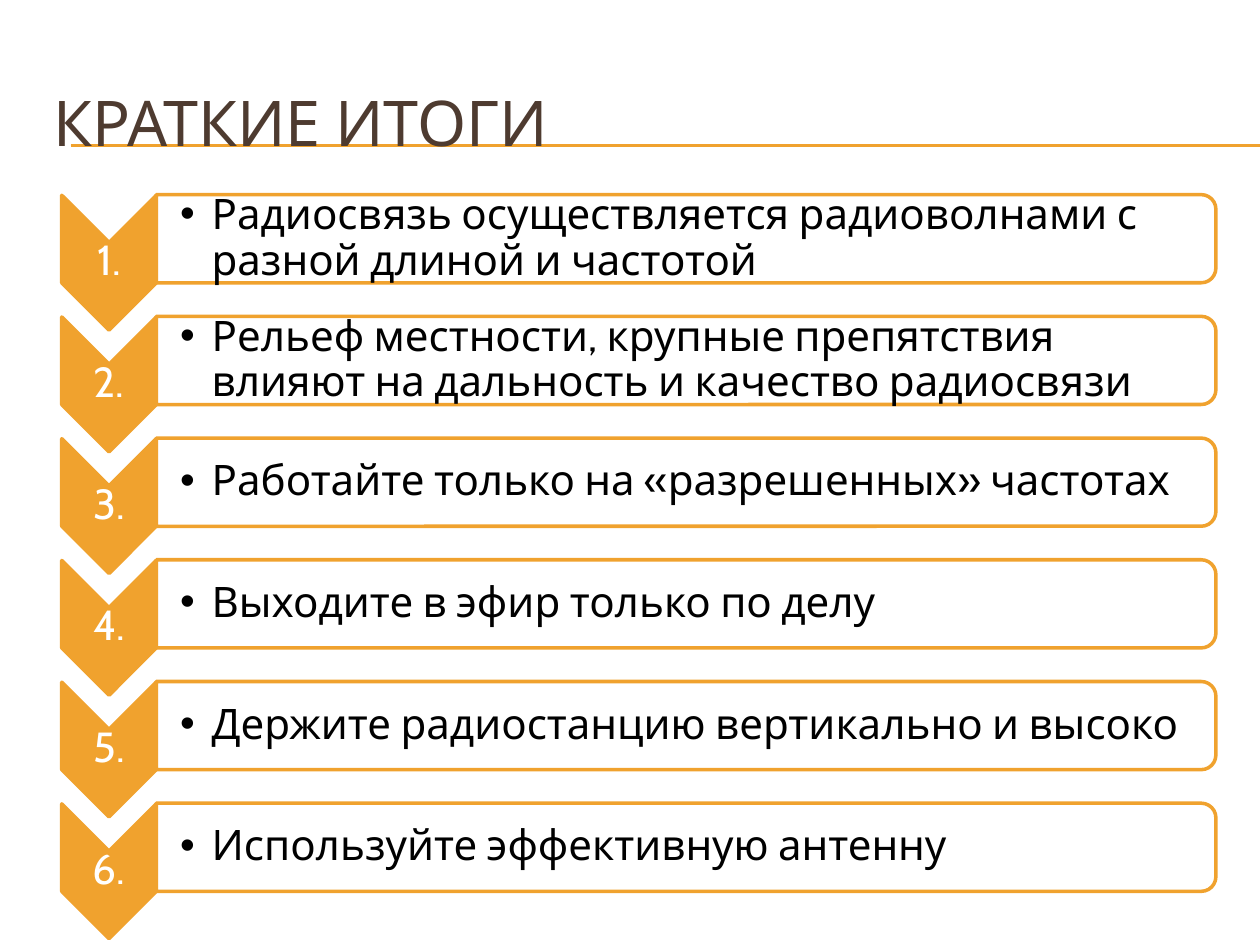
from dataclasses import dataclass

from lxml.etree import SubElement
from pptx import Presentation
from pptx.dml.color import RGBColor
from pptx.enum.shapes import MSO_CONNECTOR as Line, MSO_SHAPE as Preset
from pptx.enum.text import MSO_ANCHOR as Anchor, PP_ALIGN as Align
from pptx.oxml.ns import qn
from pptx.shapes.autoshape import Shape
from pptx.shapes.shapetree import SlideShapes
from pptx.text.text import _Paragraph as Paragraph
from pptx.util import Inches, Pt


@dataclass(frozen=True)
class Theme:
    font: str = "Cabin"
    accent: str = "F0A22E"
    heading: str = "4E3B30"
    body: str = "000000"
    paper: str = "FFFFFF"
    heading_size: int = 36
    body_size: int = 24
    outline: float = 2
    rule: float = 0.75


@dataclass(frozen=True)
class Area:
    left: float
    top: float
    width: float
    height: float

    def down(self, rows: float) -> "Area":
        return Area(self.left, self.top + rows, self.width, self.height)

    def turned(self) -> "Area":
        shift = (self.width - self.height) / 2
        return Area(self.left + shift, self.top - shift, self.height, self.width)

    def emu(self) -> tuple[int, int, int, int]:
        return (int(self.left * COLUMN), int(self.top * ROW),
                int(self.width * COLUMN), int(self.height * ROW))


THEME = Theme()
SLIDE_WIDTH, SLIDE_HEIGHT = Inches(10), Inches(7.5)
COLUMNS, ROWS = 100, 75
COLUMN, ROW = SLIDE_WIDTH / COLUMNS, SLIDE_HEIGHT / ROWS
STEP = 48.3 / 5

HEADING = Area(3.3, 5, 95, 9.2)
RULE_LEFT, RULE_ROWS = 5.6, (11.5, 11.6)
CHEVRON = Area(4.9, 15.5, 7.5, 10.7)
NUMBER = Area(4.9, 19.2, 7.5, 3.2)
CARD = Area(12.4, 15.45, 84.1, 7)
MESSAGE = Area(12.4, 15.8, 83.7, 6.3)

CONCLUSIONS = (
    "Радиосвязь осуществляется радиоволнами с разной длиной и частотой",
    "Рельеф местности, крупные препятствия влияют на дальность и качество радиосвязи",
    "Работайте только на «разрешенных» частотах",
    "Выходите в эфир только по делу",
    "Держите радиостанцию вертикально и высоко",
    "Используйте эффективную антенну",
)


def color(value: str) -> RGBColor:
    return RGBColor.from_string(value)


def draw_rule(shapes: SlideShapes, row: float) -> None:
    y = int(row * ROW)
    rule = shapes.add_connector(Line.STRAIGHT, int(RULE_LEFT * COLUMN), y, SLIDE_WIDTH, y)
    rule.line.color.rgb = color(THEME.accent)
    rule.line.width = Pt(THEME.rule)
    SubElement(rule._element.spPr, qn("a:effectLst"))


def draw_turned(shapes: SlideShapes, preset: Preset, area: Area, fill: str) -> Shape:
    figure = shapes.add_shape(preset, *area.turned().emu())
    figure.rotation = 90
    figure.shadow.inherit = False
    figure.fill.solid()
    figure.fill.fore_color.rgb = color(fill)
    figure.line.color.rgb = color(THEME.accent)
    figure.line.width = Pt(THEME.outline)
    return figure


def write(shapes: SlideShapes, area: Area, text: str, size: int, ink: str,
          insets: tuple[float, float, float, float]) -> Paragraph:
    frame = shapes.add_textbox(*area.emu()).text_frame
    frame.word_wrap = True
    frame.vertical_anchor = Anchor.MIDDLE
    (frame.margin_left, frame.margin_top,
     frame.margin_right, frame.margin_bottom) = map(Inches, insets)
    paragraph = frame.paragraphs[0]
    run = paragraph.add_run()
    run.text = text
    run.font.name = THEME.font
    run.font.size = Pt(size)
    run.font.color.rgb = color(ink)
    return paragraph


def add_bullet(paragraph: Paragraph) -> None:
    properties = paragraph._p.get_or_add_pPr()
    properties.set("marL", str(Inches(0.25)))
    properties.set("indent", str(-Inches(0.25)))
    SubElement(properties, qn("a:buFont"), typeface="Arial")
    SubElement(properties, qn("a:buChar"), char="•")


def draw_conclusion(shapes: SlideShapes, index: int, text: str) -> None:
    offset = index * STEP
    draw_turned(shapes, Preset.CHEVRON, CHEVRON.down(offset), THEME.accent)
    number = write(shapes, NUMBER.down(offset), f"{index + 1}.", THEME.body_size,
                   THEME.paper, (0.02, 0.02, 0.02, 0.02))
    number.alignment = Align.CENTER
    number.line_spacing = 0.9

    card = draw_turned(shapes, Preset.ROUND_2_SAME_RECTANGLE, CARD.down(offset), THEME.paper)
    paper = card._element.spPr.find(qn("a:solidFill")).find(qn("a:srgbClr"))
    SubElement(paper, qn("a:alpha"), val="90000")
    message = write(shapes, MESSAGE.down(offset), text, THEME.body_size,
                    THEME.body, (0.19, 0.02, 0.02, 0.02))
    add_bullet(message)
    message.line_spacing = 0.9


def main() -> None:
    deck = Presentation()
    deck.slide_width, deck.slide_height = SLIDE_WIDTH, SLIDE_HEIGHT
    slide = deck.slides.add_slide(deck.slide_layouts[6])
    slide.background.fill.solid()
    slide.background.fill.fore_color.rgb = color(THEME.paper)
    for row in RULE_ROWS:
        draw_rule(slide.shapes, row)
    write(slide.shapes, HEADING, "КРАТКИЕ ИТОГИ", THEME.heading_size,
          THEME.heading, (0.1, 0.05, 0.1, 0.05))
    for index, text in enumerate(CONCLUSIONS):
        draw_conclusion(slide.shapes, index, text)
    deck.save("out.pptx")


if __name__ == "__main__":
    main()
